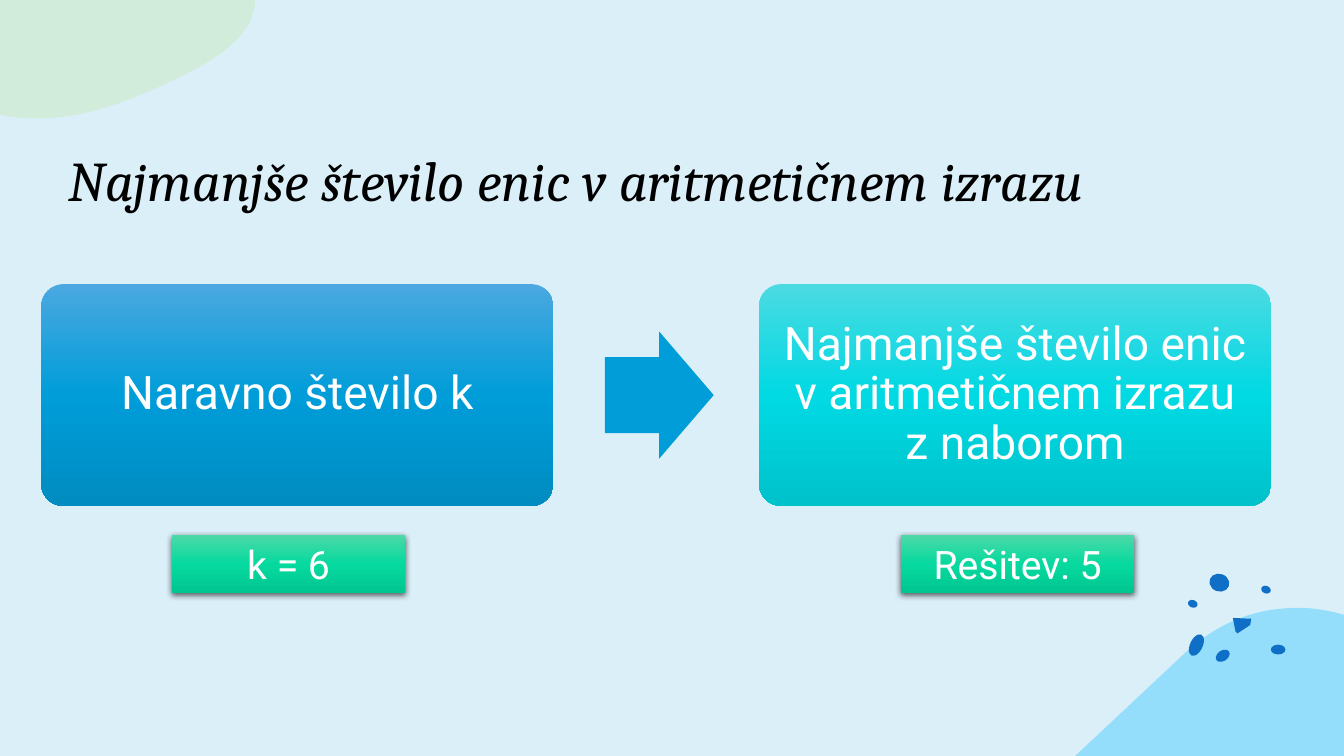
"""Build a slide that links a natural number k to the fewest ones in an expression."""
from copy import deepcopy
from dataclasses import dataclass

from lxml import etree
from pptx import Presentation
from pptx.dml.color import RGBColor
from pptx.enum.shapes import MSO_SHAPE
from pptx.enum.text import MSO_ANCHOR, PP_ALIGN
from pptx.oxml.ns import qn
from pptx.shapes.autoshape import Shape
from pptx.slide import Slide
from pptx.util import Pt

ROUNDED, RECTANGLE = MSO_SHAPE.ROUNDED_RECTANGLE, MSO_SHAPE.RECTANGLE
ARROW, OVAL = MSO_SHAPE.RIGHT_ARROW, MSO_SHAPE.OVAL
CENTER, LEFT = PP_ALIGN.CENTER, PP_ALIGN.LEFT
MIDDLE, BOTTOM = MSO_ANCHOR.MIDDLE, MSO_ANCHOR.BOTTOM
CURVE_STEPS = 20
DOT_COLOR = "0F6FC6"
TITLE_TEXT = "Najmanjše število enic v aritmetičnem izrazu"


@dataclass
class Blob:
    """A closed outline of lines (2 numbers) and Bézier curves (6 numbers)."""
    start: tuple[float, float]
    segments: list[tuple[float, ...]]
    color: str
    opacity: int = 100


@dataclass
class Dot:
    """A tilted oval placed by its centre."""
    x: float
    y: float
    width: float
    height: float
    tilt: float = 0


@dataclass
class Panel:
    """A gradient box with centred text."""
    text: str
    left: float
    colors: tuple[str, str, str]


@dataclass
class PanelStyle:
    """What the panels of one row share."""
    shape: MSO_SHAPE
    top: float
    width: float
    height: float
    size: float
    line_spacing: float
    inset: float
    shadow: bool


BLOBS = [
    Blob((768, 540), [(841.7, 470.9), (866, 447, 893, 434.2, 927.4, 434.2),
                      (938, 434.2, 949, 436, 960, 439.2), (960, 540)], "4FCEFF", 50),
    Blob((0, 0), [(182.2, 0), (182, 30, 144, 48.2, 113.8, 61.9),
                  (85, 75, 45, 91, 0, 82.1)], "CBEAC0", 50),
    Blob((880.6, 441.4), [(893.8, 442), (893, 446.5), (884, 452.4), (882.5, 451)], DOT_COLOR),
]
DOTS = [
    Dot(873.4, 468.4, 11, 7.5, -35), Dot(854.6, 460.8, 9, 16.5, 25), Dot(913, 464, 10.5, 7),
    Dot(871, 416.2, 14.4, 12.6, 20), Dot(904.3, 421.2, 7, 5.4, 20), Dot(852, 431.3, 7, 5.4, 20),
]

GREEN = ("4CD9A7", "06D99F", "00C690")
CARD_STYLE = PanelStyle(ROUNDED, 203, 365.8, 158.4, 33, 0.9, 10, False)
LABEL_STYLE = PanelStyle(RECTANGLE, 382.3, 166.3, 41.2, 28, 1.0, 3.6, True)
CARDS = [
    Panel("Naravno število k", 29.5, ("4BA8E0", "009DD9", "008CC1")),
    Panel(f"{TITLE_TEXT} z naborom", 542.2, ("4BDAE2", "01D9E3", "00C2CB")),
]
LABELS = [Panel("k = 6", 123, GREEN), Panel("Rešitev: 5", 643.7, GREEN)]


def rgb(color: str) -> RGBColor:
    return RGBColor.from_string(color)


def fill_plain(shape: Shape, color: str) -> None:
    shape.fill.solid()
    shape.fill.fore_color.rgb = rgb(color)
    shape.line.fill.background()
    shape.shadow.inherit = False


def fill_gradient(shape: Shape, colors: tuple[str, ...]) -> None:
    shape.fill.gradient()
    shape.fill.gradient_angle = 270
    stop_list = shape._element.spPr.find(".//" + qn("a:gsLst"))
    stop_list.append(deepcopy(stop_list[-1]))
    for index, (stop, color) in enumerate(zip(shape.fill.gradient_stops, colors)):
        stop.position = index / (len(colors) - 1)
        stop.color.rgb = rgb(color)
    shape.line.fill.background()
    shape.shadow.inherit = False


def set_opacity(parent: etree._Element, percent: int) -> None:
    color = parent.find(".//" + qn("a:srgbClr"))
    etree.SubElement(color, qn("a:alpha"), val=str(percent * 1000))


def add_shadow(shape: Shape) -> None:
    effects = shape._element.spPr.find(qn("a:effectLst"))
    shadow = etree.SubElement(effects, qn("a:outerShdw"), blurRad=str(Pt(4.5)),
                              dist=str(Pt(1.5)), dir="5400000", rotWithShape="0")
    etree.SubElement(shadow, qn("a:srgbClr"), val="000000")
    set_opacity(shadow, 63)


def trace(blob: Blob) -> list[tuple[int, int]]:
    points = [blob.start]
    for segment in blob.segments:
        if len(segment) == 2:
            points.append(segment)
            continue
        x0, y0 = points[-1]
        x1, y1, x2, y2, x3, y3 = segment
        for step in range(1, CURVE_STEPS + 1):
            t = step / CURVE_STEPS
            a, b, c, d = (1 - t) ** 3, 3 * t * (1 - t) ** 2, 3 * t * t * (1 - t), t ** 3
            points.append((a * x0 + b * x1 + c * x2 + d * x3, a * y0 + b * y1 + c * y2 + d * y3))
    return [(Pt(x), Pt(y)) for x, y in points]


def draw_blob(slide: Slide, blob: Blob) -> None:
    start, *others = trace(blob)
    builder = slide.shapes.build_freeform(*start)
    builder.add_line_segments(others, close=True)
    shape = builder.convert_to_shape()
    fill_plain(shape, blob.color)
    if blob.opacity < 100:
        set_opacity(shape._element.spPr, blob.opacity)


def draw_dot(slide: Slide, dot: Dot) -> None:
    shape = slide.shapes.add_shape(OVAL, Pt(dot.x - dot.width / 2), Pt(dot.y - dot.height / 2),
                                   Pt(dot.width), Pt(dot.height))
    shape.rotation = dot.tilt
    fill_plain(shape, DOT_COLOR)


def draw_panel(slide: Slide, panel: Panel, style: PanelStyle) -> None:
    shape = slide.shapes.add_shape(style.shape, Pt(panel.left), Pt(style.top),
                                   Pt(style.width), Pt(style.height))
    if style.shape == ROUNDED:
        shape.adjustments[0] = 0.1
    fill_gradient(shape, panel.colors)
    if style.shadow:
        add_shadow(shape)
    frame = shape.text_frame
    frame.word_wrap = True
    frame.vertical_anchor = MIDDLE
    frame.margin_left = frame.margin_right = Pt(style.inset)
    frame.margin_top = frame.margin_bottom = Pt(style.inset)
    write(shape, panel.text, "Roboto", style.size, "FFFFFF", CENTER)
    frame.paragraphs[0].line_spacing = style.line_spacing


def write(shape: Shape, text: str, font: str, size: float, color: str, align: PP_ALIGN) -> None:
    paragraph = shape.text_frame.paragraphs[0]
    paragraph.text = text
    paragraph.alignment = align
    paragraph.font.name = font
    paragraph.font.size = Pt(size)
    paragraph.font.color.rgb = rgb(color)


def draw_title(slide: Slide) -> None:
    title = slide.shapes.title
    title.left, title.top, title.width, title.height = map(Pt, (41.8, 48.2, 793.4, 107.3))
    title.text_frame.vertical_anchor = BOTTOM
    write(title, TITLE_TEXT, "Cambria", 40, "000000", LEFT)
    title.text_frame.paragraphs[0].font.italic = True


def main() -> None:
    presentation = Presentation()
    presentation.slide_width, presentation.slide_height = Pt(960), Pt(540)
    slide = presentation.slides.add_slide(presentation.slide_layouts[5])
    slide.background.fill.solid()
    slide.background.fill.fore_color.rgb = rgb("DBEFF9")
    draw_title(slide)
    for blob in BLOBS:
        draw_blob(slide, blob)
    for dot in DOTS:
        draw_dot(slide, dot)
    for panels, style in ((CARDS, CARD_STYLE), (LABELS, LABEL_STYLE)):
        for panel in panels:
            draw_panel(slide, panel, style)
    arrow = slide.shapes.add_shape(ARROW, *map(Pt, (432, 236.9, 77.8, 90.7)))
    arrow.adjustments[0], arrow.adjustments[1] = 0.6, 0.5
    fill_plain(arrow, "009DD9")
    presentation.save("out.pptx")


if __name__ == "__main__":
    main()
